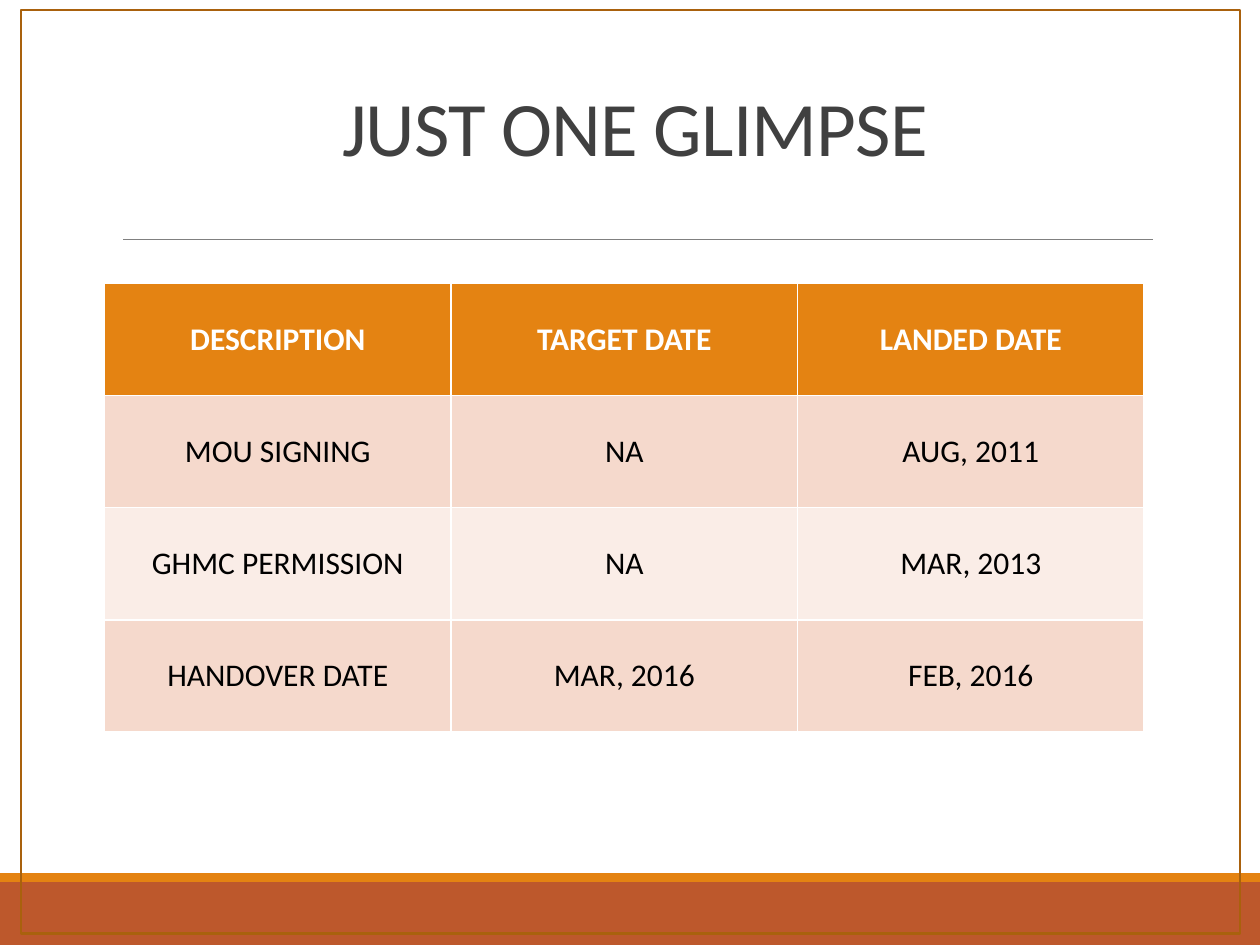
from lxml import etree
from pptx import Presentation
from pptx.dml.color import RGBColor
from pptx.enum.shapes import MSO_CONNECTOR, MSO_SHAPE
from pptx.enum.text import MSO_ANCHOR, PP_ALIGN
from pptx.oxml.ns import qn
from pptx.util import Inches, Pt

RECT = MSO_SHAPE.RECTANGLE
LINE = MSO_CONNECTOR.STRAIGHT
MIDDLE, BOTTOM = MSO_ANCHOR.MIDDLE, MSO_ANCHOR.BOTTOM
CENTER = PP_ALIGN.CENTER

FONT = "Calibri"
HEX = {
    "rust": "BD582C", "orange": "E48312", "gray": "808080",
    "ink": "404040", "white": "FFFFFF", "black": "000000",
    "peach": "F5D9CC", "pale": "FAEDE7", "frame": "A9610D",
}
TITLE = "JUST ONE GLIMPSE"
ROWS = [
    ("DESCRIPTION", "TARGET DATE", "LANDED DATE"),
    ("MOU SIGNING", "NA", "AUG, 2011"),
    ("GHMC PERMISSION", "NA", "MAR, 2013"),
    ("HANDOVER DATE", "MAR, 2016", "FEB, 2016"),
]
BANDS = [("rust", 7, 0.5), ("orange", 6.93, 0.07)]
COL_W, ROW_H = 2.75, 0.89


def color(name):
    return RGBColor.from_string(HEX[name])


def box(slide, left, top, width, height):
    shape = slide.shapes.add_shape(
        RECT, Inches(left), Inches(top), Inches(width), Inches(height))
    shape.shadow.inherit = False
    return shape


def style(para, size, tint, bold=False):
    para.alignment = CENTER
    for run in para.runs:
        font = run.font
        font.name, font.size, font.bold = FONT, Pt(size), bold
        font.color.rgb = color(tint)


def add_bands(slide):
    for tint, top, height in BANDS:
        band = box(slide, 0, top, 10, height)
        band.fill.solid()
        band.fill.fore_color.rgb = color(tint)
        band.line.fill.background()


def add_rule(slide):
    rule = slide.shapes.add_connector(
        LINE, Inches(0.98), Inches(1.9), Inches(9.15), Inches(1.9))
    rule.line.color.rgb = color("gray")
    rule.line.width = Pt(0.5)
    etree.SubElement(rule._element.spPr, qn("a:effectLst"))


def set_title(slide):
    title = slide.shapes.title
    title.left, title.top = Inches(0.83), Inches(0.42)
    title.width, title.height = Inches(8.42), Inches(1)
    frame = title.text_frame
    frame.text = TITLE
    frame.vertical_anchor = BOTTOM
    para = frame.paragraphs[0]
    para.line_spacing = 0.85
    style(para, 44, "ink")
    para.runs[0].font._element.set("spc", "-50")


def add_dates(slide):
    count = len(ROWS[0])
    table = slide.shapes.add_table(
        len(ROWS), count, Inches(0.83), Inches(2.25),
        Inches(COL_W * count), Inches(ROW_H * len(ROWS))).table
    for col in table.columns:
        col.width = Inches(COL_W)
    for r, row in enumerate(ROWS):
        table.rows[r].height = Inches(ROW_H)
        head = r == 0
        fill = "orange" if head else "peach" if r % 2 else "pale"
        for c, text in enumerate(row):
            cell = table.cell(r, c)
            cell.text_frame.text = text
            cell.vertical_anchor = MIDDLE
            cell.fill.solid()
            cell.fill.fore_color.rgb = color(fill)
            style(cell.text_frame.paragraphs[0], 18,
                  "white" if head else "black", head)


def add_frame(slide):
    frame = box(slide, 0.17, 0.08, 9.67, 7.33)
    frame.fill.background()
    frame.line.color.rgb = color("frame")
    frame.line.width = Pt(1.25)


def main():
    deck = Presentation()
    deck.slide_width, deck.slide_height = Inches(10), Inches(7.5)
    slide = deck.slides.add_slide(deck.slide_layouts[5])
    add_bands(slide)
    add_rule(slide)
    set_title(slide)
    add_dates(slide)
    add_frame(slide)
    deck.save("out.pptx")


if __name__ == "__main__":
    main()
